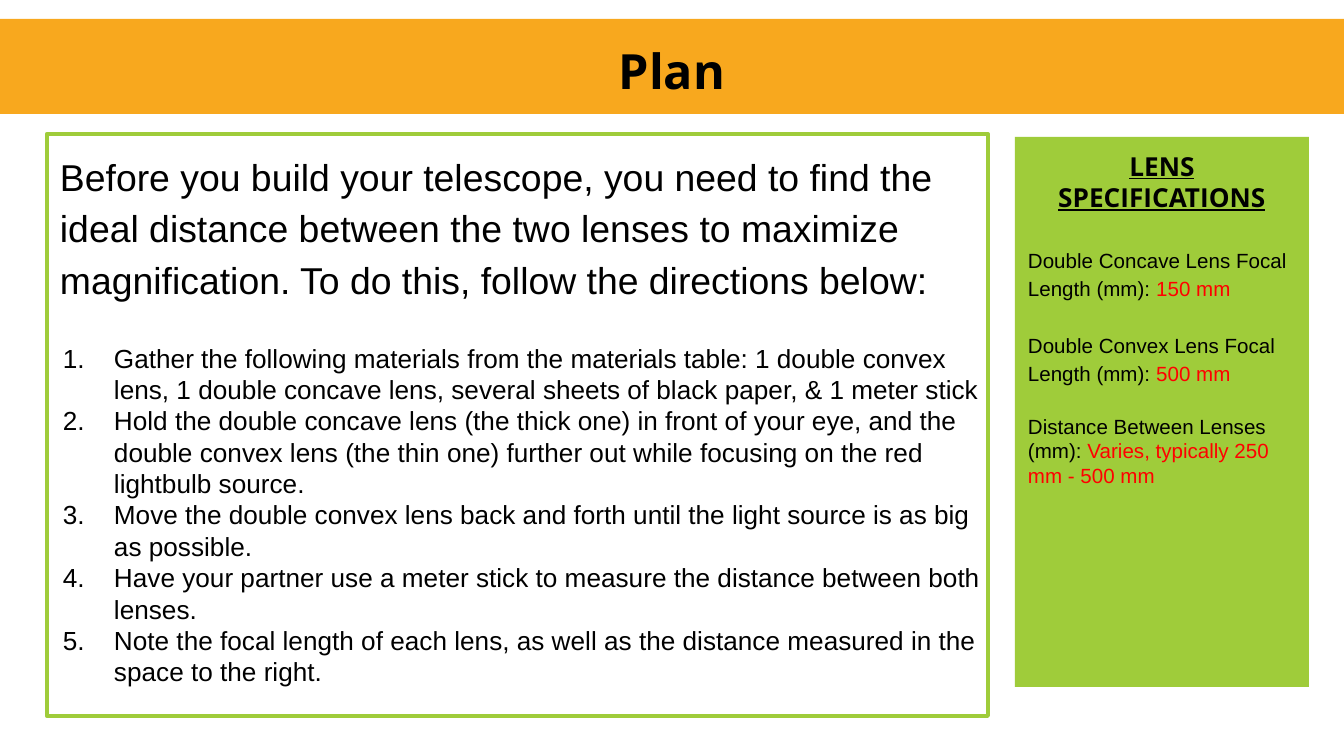
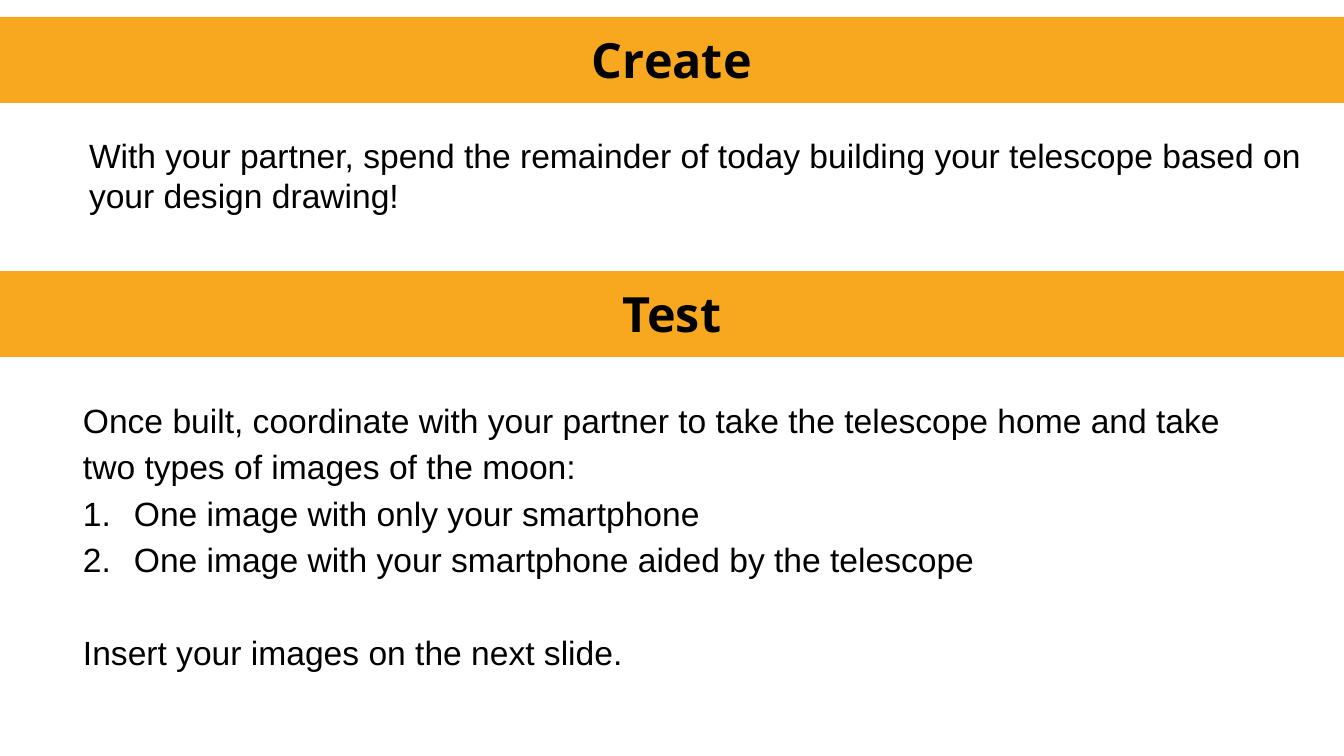
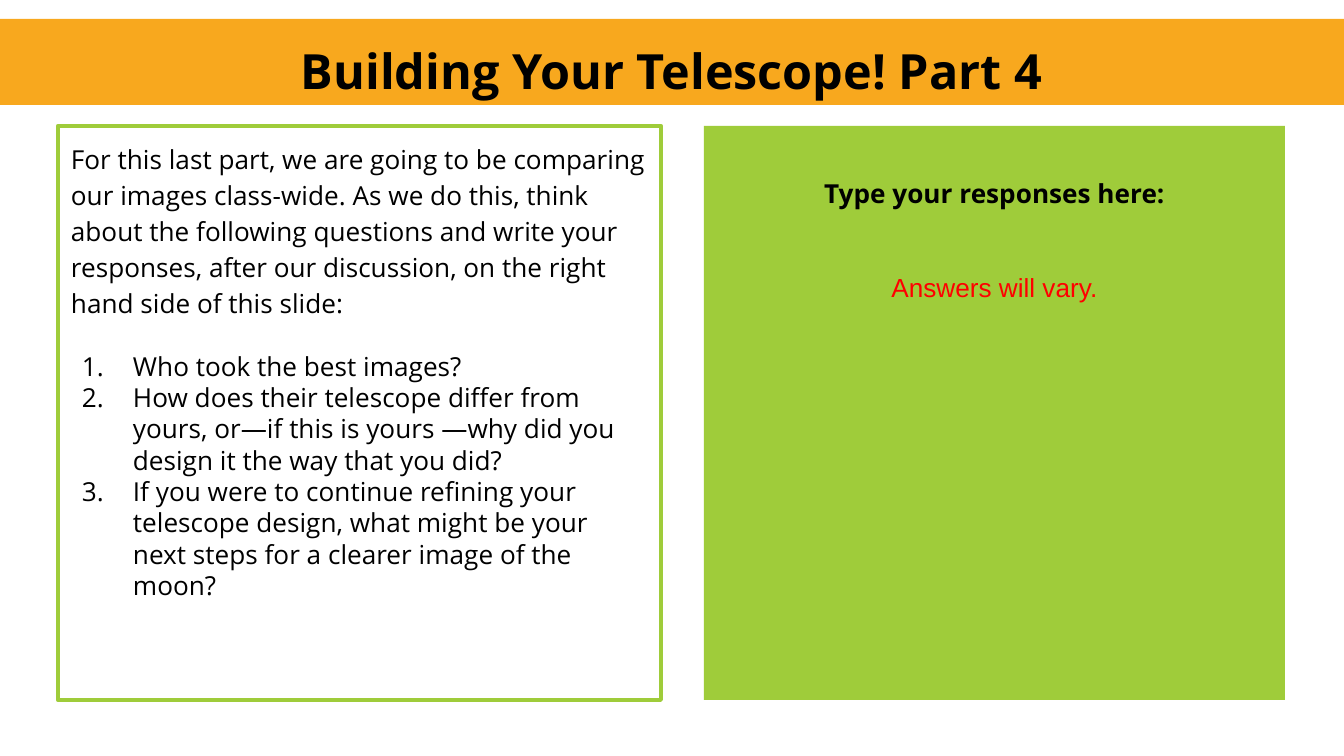
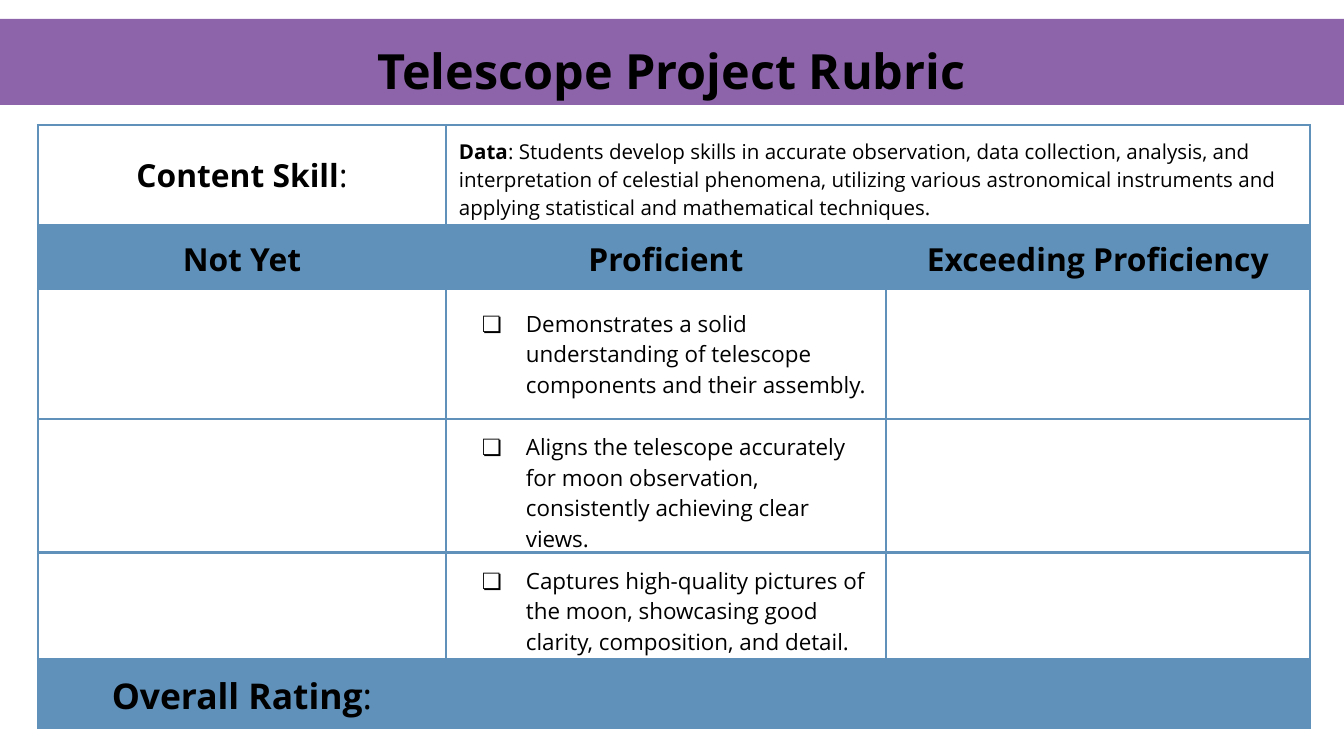
import pptx
import pptx.dml.color
import pptx.enum.shapes
import pptx.enum.text
import pptx.oxml
import pptx.oxml.ns
import pptx.util
from dataclasses import dataclass
from lxml import etree

SLIDE_W, SLIDE_H = 1344, 756
EMU_PER_PX = 9144000 / SLIDE_W
INSET = 13
LIST_INDENT = (51, -51)
CHECK_INDENT = (67, -44)


@dataclass(frozen=True)
class Theme:
    black: str = "000000"
    white: str = "FFFFFF"
    red: str = "FF0000"
    orange: str = "F8A81E"
    green: str = "9FCC3A"
    purple: str = "8D64AA"
    blue: str = "5F91BA"
    grid: str = "6091BA"
    sans: str = "Arial"
    display: str = "Open Sans"
    title: int = 26
    lead: int = 20
    rating: int = 19
    body: int = 18
    header: int = 17
    item: int = 14
    check: int = 12
    small: int = 11


T = Theme()
ALIGN = pptx.enum.text.PP_ALIGN
ANCHOR = pptx.enum.text.MSO_ANCHOR


def px(n):
    return pptx.util.Emu(round(n * EMU_PER_PX))


def rgb(value):
    return pptx.dml.color.RGBColor.from_string(value)


def apply(target, values):
    for name, value in values.items():
        setattr(target, name, value)


def run(text, color=T.black, **font):
    return text, color, font


def para(*runs, indent=(0, 0), bullet=None, **fmt):
    """Describe a paragraph; fmt holds python-pptx paragraph attributes."""
    return {"runs": runs, "indent": indent, "bullet": bullet, "fmt": fmt}


def numbered(items, **fmt):
    return [para(run(item), indent=LIST_INDENT, bullet="1.", **fmt) for item in items]


def set_bullet(pPr, bullet):
    qn = pptx.oxml.ns.qn
    clr = etree.SubElement(pPr, qn("a:buClr"))
    etree.SubElement(clr, qn("a:srgbClr"), val=T.black)
    if bullet == "1.":
        etree.SubElement(pPr, qn("a:buFont"), typeface="+mj-lt")
        etree.SubElement(pPr, qn("a:buAutoNum"), type="arabicPeriod")
    else:
        etree.SubElement(pPr, qn("a:buFont"), typeface=T.display)
        etree.SubElement(pPr, qn("a:buChar"), char=bullet)


def write(tf, paras, size, font):
    for i, item in enumerate(paras):
        p = tf.add_paragraph() if i else tf.paragraphs[0]
        apply(p, item["fmt"])
        pPr = p._p.get_or_add_pPr()
        left, first = item["indent"]
        pPr.set("marL", str(px(left)))
        pPr.set("indent", str(px(first)))
        if item["bullet"]:
            set_bullet(pPr, item["bullet"])
        for text, color, changes in item["runs"]:
            r = p.add_run()
            r.text = text
            apply(r.font, {"name": font, "size": pptx.util.Pt(size), **changes})
            r.font.color.rgb = rgb(color)


def fill_frame(sp, paras, size, font, **frame):
    tf = sp.text_frame
    apply(tf, {"word_wrap": True, "vertical_anchor": ANCHOR.TOP,
               "margin_left": px(INSET), "margin_right": px(INSET), **frame})
    write(tf, paras, size, font)


def add_box(s, box, paras, size, font, fill=None, line=None, top=INSET):
    sp = s.shapes.add_shape(pptx.enum.shapes.MSO_SHAPE.RECTANGLE, *map(px, box))
    sp.shadow.inherit = False
    if fill:
        sp.fill.solid()
        sp.fill.fore_color.rgb = rgb(fill)
    else:
        sp.fill.background()
    if line:
        sp.line.color.rgb = rgb(line)
        sp.line.width = pptx.util.Pt(2.25)
    else:
        sp.line.fill.background()
    fill_frame(sp, paras, size, font, margin_top=px(top), margin_bottom=px(INSET))


def add_text(s, box, paras, size, font, top=7):
    sp = s.shapes.add_textbox(*map(px, box))
    fill_frame(sp, paras, size, font, margin_top=px(top), margin_bottom=px(top))


def add_band(s, title, y=19, h=86, fill=T.orange, spacing=1.15):
    heading = para(run(title, bold=True), alignment=ALIGN.CENTER, line_spacing=spacing)
    add_box(s, (0, y, SLIDE_W, h), [heading], T.title, T.display, fill=fill)


def set_borders(cell):
    tcPr = cell._tc.get_or_add_tcPr()
    for i, side in enumerate(("lnL", "lnR", "lnT", "lnB")):
        tcPr.insert(i, pptx.oxml.parse_xml(
            f'<a:{side} {pptx.oxml.ns.nsdecls("a")} w="19050"><a:solidFill>'
            f'<a:srgbClr val="{T.grid}"/></a:solidFill></a:{side}>'))


def add_grid(s, x, y, cols, rows, contents, filled_rows, spans):
    """contents maps (row, column) to (paragraph, size)."""
    frame = s.shapes.add_table(len(rows), len(cols), px(x), px(y), px(sum(cols)), px(sum(rows)))
    table = frame.table
    apply(table, {"first_row": False, "horz_banding": False})
    for col, width in zip(table.columns, cols):
        col.width = px(width)
    for row, height in zip(table.rows, rows):
        row.height = px(height)
    for start, end in spans:
        table.cell(*start).merge(table.cell(*end))
    margins = {f"margin_{side}": px(INSET) for side in ("left", "right", "top", "bottom")}
    for r in range(len(rows)):
        for c in range(len(cols)):
            cell = table.cell(r, c)
            apply(cell, {"vertical_anchor": ANCHOR.MIDDLE, **margins})
            cell.fill.solid()
            cell.fill.fore_color.rgb = rgb(T.blue if r in filled_rows else T.white)
            set_borders(cell)
            if (r, c) in contents:
                content, size = contents[r, c]
                write(cell.text_frame, [content], size, T.display)


def plan_slide(s):
    add_box(s, (47, 134, 941, 582), [para(run(
        "Before you build your telescope, you need to find the ideal distance between the two "
        "lenses to maximize magnification. To do this, follow the directions below:"),
        line_spacing=1.15, alignment=ALIGN.LEFT)], T.lead, T.sans, line=T.green)
    add_band(s, "Plan", h=95)
    heading = run("LENS SPECIFICATIONS", name=T.display, size=pptx.util.Pt(T.item),
                  bold=True, underline=True)
    specs = [
        ("Double Concave Lens Focal Length (mm): ", "150 mm", 17, 1.15),
        ("Double Convex Lens Focal Length (mm): ", "500 mm", 15, 1.15),
        ("Distance Between Lenses (mm): ", "Varies, typically 250 mm - 500 mm", 15, 1.0),
    ]
    add_box(s, (1015, 137, 294, 550),
            [para(heading, alignment=ALIGN.CENTER)]
            + [para(run(label), run(value, T.red), alignment=ALIGN.LEFT,
                    space_before=pptx.util.Pt(gap), line_spacing=spacing)
               for label, value, gap, spacing in specs],
            T.small, T.sans, fill=T.green)
    add_text(s, (50, 335, 950, 362), numbered([
        "Gather the following materials from the materials table: 1 double convex lens, "
        "1 double concave lens, several sheets of black paper, & 1 meter stick",
        "Hold the double concave lens (the thick one) in front of your eye, and the double "
        "convex lens (the thin one) further out while focusing on the red lightbulb source.",
        "Move the double convex lens back and forth until the light source is as big as possible.",
        "Have your partner use a meter stick to measure the distance between both lenses.",
        "Note the focal length of each lens, as well as the distance measured in the space "
        "to the right.",
    ]), T.item, T.sans)


def create_test_slide(s):
    add_text(s, (56, 122, 1260, 608), [para(run(
        "With your partner, spend the remainder of today building your telescope based on "
        "your design drawing!"), indent=(20, 0))], T.body, T.sans, top=INSET)
    for title, y in (("Create", 17), ("Test", 271)):
        add_band(s, title, y=y, spacing=1.0)
    steps = numbered(["One image with only your smartphone",
                      "One image with your smartphone aided by the telescope"],
                     line_spacing=1.15)
    add_text(s, (70, 387, 1211, 290), [
        para(run("Once built, coordinate with your partner to take the telescope home and "
                 "take two types of images of the moon:"), line_spacing=1.15),
        *steps,
        para(run("Insert your images on the next slide."), line_spacing=1.15,
             space_before=pptx.util.Pt(25)),
    ], T.body, T.sans)


def compare_slide(s):
    add_box(s, (58, 126, 603, 574), [para(run(
        "For this last part, we are going to be comparing our images class-wide. As we do this, "
        "think about the following questions and write your responses, after our discussion, "
        "on the right hand side of this slide:"),
        line_spacing=1.15, alignment=ALIGN.LEFT)], T.item, T.display, line=T.green)
    add_box(s, (704, 126, 581, 574), [
        para(run("Type your responses here:", bold=True), alignment=ALIGN.CENTER),
        para(run("Answers will vary.", T.red, name=T.sans), alignment=ALIGN.CENTER,
             space_before=pptx.util.Pt(34)),
    ], T.item, T.display, fill=T.green, top=51)
    add_band(s, "Building Your Telescope! Part 4")
    add_text(s, (69, 343, 581, 267), numbered([
        "Who took the best images?",
        "How does their telescope differ from yours, or—if this is yours —why did you design "
        "it the way that you did?",
        "If you were to continue refining your telescope design, what might be your next steps "
        "for a clearer image of the moon?",
    ]), T.item, T.display)


def rubric_slide(s):
    add_band(s, "Telescope Project Rubric", fill=T.purple)

    def label(text, tail=""):
        runs = [run(text, bold=True)] + ([run(tail)] if tail else [])
        return para(*runs, alignment=ALIGN.CENTER)

    contents = {
        (0, 0): (label("Content Skill", ":"), T.header),
        (0, 1): (para(run("Data", bold=True), run(
            ": Students develop skills in accurate observation, data collection, analysis, and "
            "interpretation of celestial phenomena, utilizing various astronomical instruments "
            "and applying statistical and mathematical techniques.")), T.small),
        (5, 0): (label("Overall Rating", ":"), T.rating),
    }
    for c, level in enumerate(("Not Yet", "Proficient", "Exceeding Proficiency")):
        contents[1, c] = label(level), T.header
    criteria = [
        "Demonstrates a solid understanding of telescope components and their assembly.",
        "Aligns the telescope accurately for moon observation, consistently achieving clear views.",
        "Captures high-quality pictures of the moon, showcasing good clarity, composition, "
        "and detail.",
    ]
    for r, criterion in enumerate(criteria, start=2):
        contents[r, 1] = para(run(criterion), indent=CHECK_INDENT, bullet="❏"), T.check
    add_grid(s, 38, 125, (408, 440, 424), (89, 63, 130, 130, 103, 67), contents,
             filled_rows=(1, 5), spans=[((0, 1), (0, 2)), ((5, 1), (5, 2))])


def main():
    prs = pptx.Presentation()
    apply(prs, {"slide_width": px(SLIDE_W), "slide_height": px(SLIDE_H)})
    for build in (plan_slide, create_test_slide, compare_slide, rubric_slide):
        build(prs.slides.add_slide(prs.slide_layouts[6]))
    prs.save("out.pptx")


if __name__ == "__main__":
    main()
